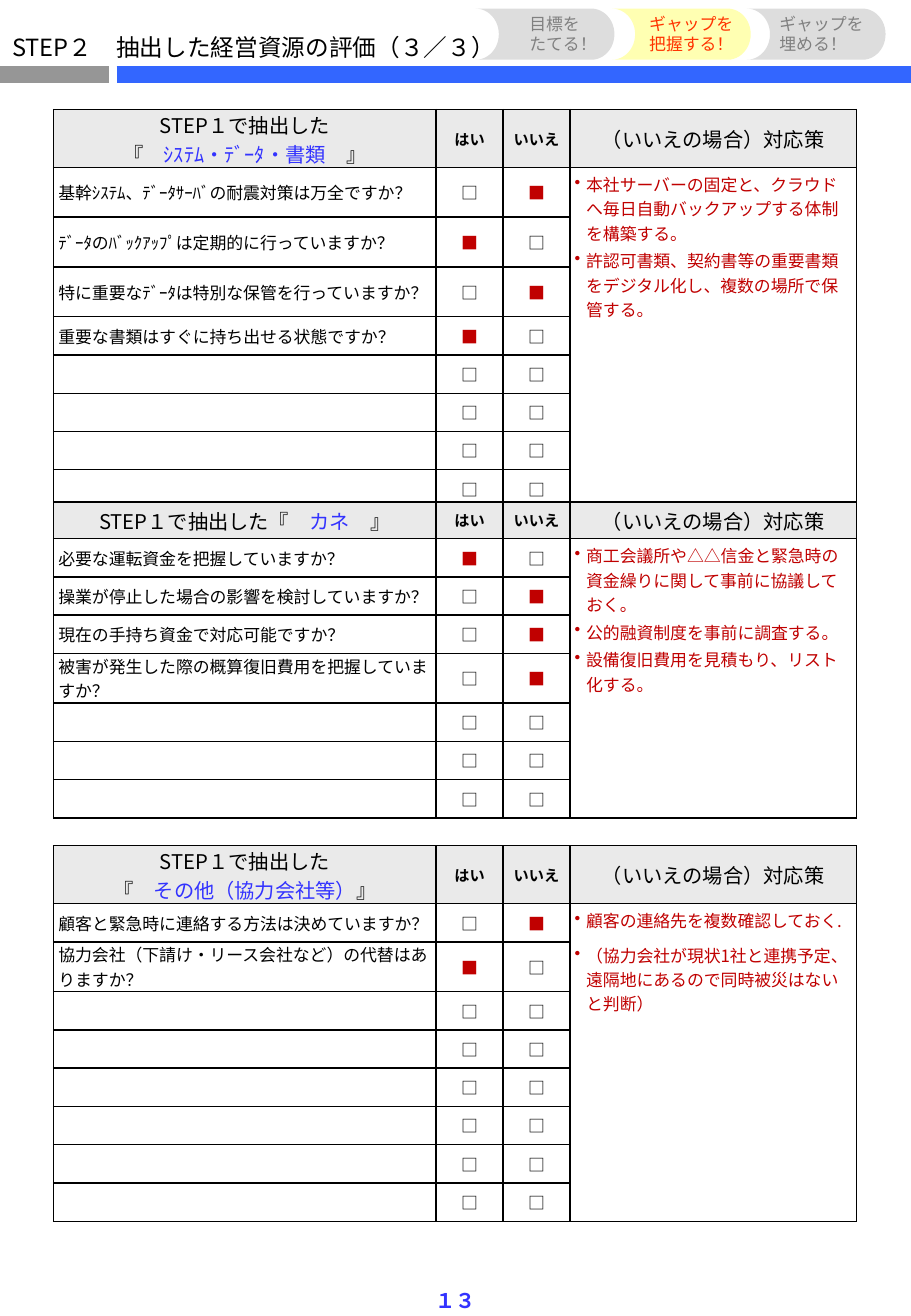
from lxml.etree import SubElement
from pptx import Presentation
from pptx.dml.color import RGBColor
from pptx.enum.shapes import MSO_CONNECTOR, MSO_SHAPE
from pptx.enum.text import MSO_ANCHOR, MSO_AUTO_SIZE, PP_ALIGN
from pptx.oxml import parse_xml
from pptx.oxml.ns import nsdecls, qn
from pptx.util import Cm, Pt

BLACK, GRAY, RED, ACCENT = "000000", "808080", "C00000", "3333FF"
HEADER_FILL = "EAEAEA"
COLUMN_WIDTHS = (8, 1.4, 1.4, 5.99)
ROW, TALL_ROW, HEADER_ROW, TALL_HEADER = 0.8, 1.04, 0.77, 1.21
YES, NO, BLANK = "■□", "□■", "□□"


def color(hex_code):
    return RGBColor.from_string(hex_code)


class WorksheetSlide:
    font_name = "Noto Sans CJK JP"

    def __init__(self, presentation):
        self.slide = presentation.slides.add_slide(presentation.slide_layouts[5])
        self.shapes = self.slide.shapes

    def style(self, paragraph, size, hex_code=BLACK, bold=False, align=PP_ALIGN.LEFT):
        paragraph.alignment = align
        font = paragraph.font
        font.name, font.size, font.bold = self.font_name, Pt(size), bold
        font.color.rgb = color(hex_code)
        east_asian = SubElement(font._element, qn("a:ea"))
        east_asian.set("typeface", self.font_name)

    def title(self, text, left, top, width, height):
        title = self.shapes.title
        title.left, title.top, title.width, title.height = map(Cm, (left, top, width, height))
        frame = title.text_frame
        frame.text = text
        frame.word_wrap, frame.auto_size = False, MSO_AUTO_SIZE.NONE
        frame.vertical_anchor = MSO_ANCHOR.MIDDLE
        self.style(frame.paragraphs[0], 14)

    def rule(self, start, end, y, hex_code):
        rule = self.shapes.add_connector(
            MSO_CONNECTOR.STRAIGHT, Cm(start), Cm(y), Cm(end), Cm(y))
        rule.line.color.rgb = color(hex_code)
        rule.line.width = Pt(10)
        SubElement(rule._element.spPr, qn("a:effectLst"))

    def step_tab(self, left, fill):
        tab = self.shapes.add_shape(
            MSO_SHAPE.FLOWCHART_STORED_DATA, Cm(left), Cm(0.18), Cm(2.9), Cm(1.07))
        tab.shadow.inherit = False
        tab.fill.solid()
        tab.fill.fore_color.rgb = color(fill)
        tab.line.fill.background()
        tab._element.spPr.xfrm.set("flipH", "1")

    def label(self, lines, box, size, hex_code, bold=False, align=PP_ALIGN.LEFT):
        frame = self.shapes.add_textbox(*map(Cm, box)).text_frame
        frame.word_wrap = False
        frame.vertical_anchor = MSO_ANCHOR.MIDDLE
        for index, line in enumerate(lines):
            paragraph = frame.add_paragraph() if index else frame.paragraphs[0]
            paragraph.text = line
            paragraph.line_spacing = Pt(size + 2)
            self.style(paragraph, size, hex_code, bold, align)

    def frame_cell(self, cell, fill=None):
        """Set the borders, fill, insets and anchor of a table cell."""
        cell.margin_left = cell.margin_right = Cm(0.1)
        cell.margin_top = cell.margin_bottom = 0
        cell.vertical_anchor = MSO_ANCHOR.MIDDLE
        properties = cell._tc.get_or_add_tcPr()
        for index, side in enumerate("LRTB"):
            properties.insert(index, parse_xml(
                f'<a:ln{side} {nsdecls("a")} w="12700"><a:solidFill>'
                f'<a:srgbClr val="{BLACK}"/></a:solidFill></a:ln{side}>'))
        if fill:
            cell.fill.solid()
            cell.fill.fore_color.rgb = color(fill)
        else:
            cell.fill.background()

    def cell_text(self, cell, text, size, **look):
        paragraph = cell.text_frame.paragraphs[0]
        self.style(paragraph, size, **look)
        if text:
            paragraph.add_run().text = text
        else:
            SubElement(paragraph._p, qn("a:endParaRPr")).set("sz", str(size * 100))

    def heading(self, cell, opening, topic, closing):
        paragraph = cell.text_frame.paragraphs[0]
        self.style(paragraph, 12, align=PP_ALIGN.CENTER)
        for index, line in enumerate(opening):
            if index:
                paragraph.add_line_break()
            paragraph.add_run().text = line
        topic_run = paragraph.add_run()
        topic_run.text = topic
        topic_run.font.color.rgb = color(ACCENT)
        paragraph.add_run().text = closing

    def responses(self, cell, items, gap):
        cell.vertical_anchor = MSO_ANCHOR.TOP
        cell.margin_top = Cm(0.1)
        frame = cell.text_frame
        for index, item in enumerate(items):
            paragraph = frame.add_paragraph() if index else frame.paragraphs[0]
            paragraph.text = item
            paragraph.space_after = Pt(gap)
            self.style(paragraph, 10, RED)
            properties = paragraph._p.get_or_add_pPr()
            properties.set("marL", str(Cm(0.24)))
            properties.set("indent", str(-Cm(0.24)))
            properties.insert_element_before(
                parse_xml(f'<a:buChar {nsdecls("a")} char="•"/>'), "a:defRPr")

    def checklist(self, top, heading, questions, blank_rows, measures, gap=2):
        """Add a table of questions with yes/no boxes and one column of measures."""
        rows = questions + [("", BLANK)] * blank_rows
        heights = [TALL_HEADER if len(heading[0]) > 1 else HEADER_ROW]
        heights += [TALL_ROW if len(question) > 23 else ROW for question, _ in rows]
        table = self.shapes.add_table(
            len(heights), len(COLUMN_WIDTHS), Cm(1.12), Cm(top),
            Cm(sum(COLUMN_WIDTHS)), Cm(sum(heights))).table
        table.first_row = table.horz_banding = False
        for column, width in zip(table.columns, COLUMN_WIDTHS):
            column.width = Cm(width)
        for index, height in enumerate(heights):
            table.rows[index].height = Cm(height)
            for column in range(len(COLUMN_WIDTHS)):
                self.frame_cell(table.cell(index, column), None if index else HEADER_FILL)

        self.heading(table.cell(0, 0), *heading)
        for column, answer in enumerate(("はい", "いいえ"), 1):
            self.cell_text(table.cell(0, column), answer, 9, bold=True, align=PP_ALIGN.CENTER)
        self.cell_text(table.cell(0, 3), "（いいえの場合）対応策", 12, align=PP_ALIGN.CENTER)

        for index, (question, boxes) in enumerate(rows, 1):
            self.cell_text(table.cell(index, 0), question, 10)
            for column, box in enumerate(boxes, 1):
                self.cell_text(table.cell(index, column), box, 10, align=PP_ALIGN.CENTER,
                               hex_code=RED if box == "■" else BLACK)
            if index > 1:
                self.cell_text(table.cell(index, 3), "", 10)
        table.cell(1, 3).merge(table.cell(len(rows), 3))
        self.responses(table.cell(1, 3), measures, gap)


def main():
    presentation = Presentation()
    presentation.slide_width, presentation.slide_height = Cm(19.05), Cm(27.51)
    sheet = WorksheetSlide(presentation)

    sheet.rule(0, 2.28, 1.55, "969696")
    sheet.rule(2.44, 19.05, 1.55, "3366FF")
    sheet.title("STEP２　抽出した経営資源の評価（３／３）", 0, 0.56, 10.8, 0.86)
    sheet.label(["１３"], (8.84, 26.8, 1.37, 0.79), 12, ACCENT, True, PP_ALIGN.CENTER)

    for left, fill in ((15.62, "DDDDDD"), (12.8, "FFFFB2"), (9.95, "DDDDDD")):
        sheet.step_tab(left, fill)
    steps = (
        (10.82, 1.93, ["目標を", "たてる！"], GRAY, PP_ALIGN.LEFT),
        (13.31, 2.29, ["ギャップを", "把握する！"], "FF3300", PP_ALIGN.CENTER),
        (16.05, 2.29, ["ギャップを", "埋める！"], GRAY, PP_ALIGN.LEFT),
    )
    for left, width, lines, hex_code, align in steps:
        sheet.label(lines, (left, 0.15, width, 1.12), 10, hex_code, align=align)

    sheet.checklist(
        2.29, (["STEP１で抽出した", "『　"], "ｼｽﾃﾑ・ﾃﾞｰﾀ・書類　", "』"),
        [("基幹ｼｽﾃﾑ、ﾃﾞｰﾀｻｰﾊﾞの耐震対策は万全ですか？", NO),
         ("ﾃﾞｰﾀのﾊﾞｯｸｱｯﾌﾟは定期的に行っていますか？", YES),
         ("特に重要なﾃﾞｰﾀは特別な保管を行っていますか？", NO),
         ("重要な書類はすぐに持ち出せる状態ですか？", YES)], 4,
        ["本社サーバーの固定と、クラウドへ毎日自動バックアップする体制を構築する。",
         "許認可書類、契約書等の重要書類をデジタル化し、複数の場所で保管する。"])
    sheet.checklist(
        10.49, (["STEP１で抽出した『　"], "カネ　", "』"),
        [("必要な運転資金を把握していますか？", YES),
         ("操業が停止した場合の影響を検討していますか？", NO),
         ("現在の手持ち資金で対応可能ですか？", NO),
         ("被害が発生した際の概算復旧費用を把握していますか？", NO)], 3,
        ["商工会議所や△△信金と緊急時の資金繰りに関して事前に協議しておく。",
         "公的融資制度を事前に調査する。",
         "設備復旧費用を見積もり、リスト化する。"])
    sheet.checklist(
        17.68, (["STEP１で抽出した", "『　"], "その他（協力会社等）", "』"),
        [("顧客と緊急時に連絡する方法は決めていますか？", NO),
         ("協力会社（下請け・リース会社など）の代替はありますか？", YES)], 6,
        ["顧客の連絡先を複数確認しておく.",
         "（協力会社が現状1社と連携予定、遠隔地にあるので同時被災はないと判断）"], gap=6)
    presentation.save("out.pptx")


if __name__ == "__main__":
    main()
